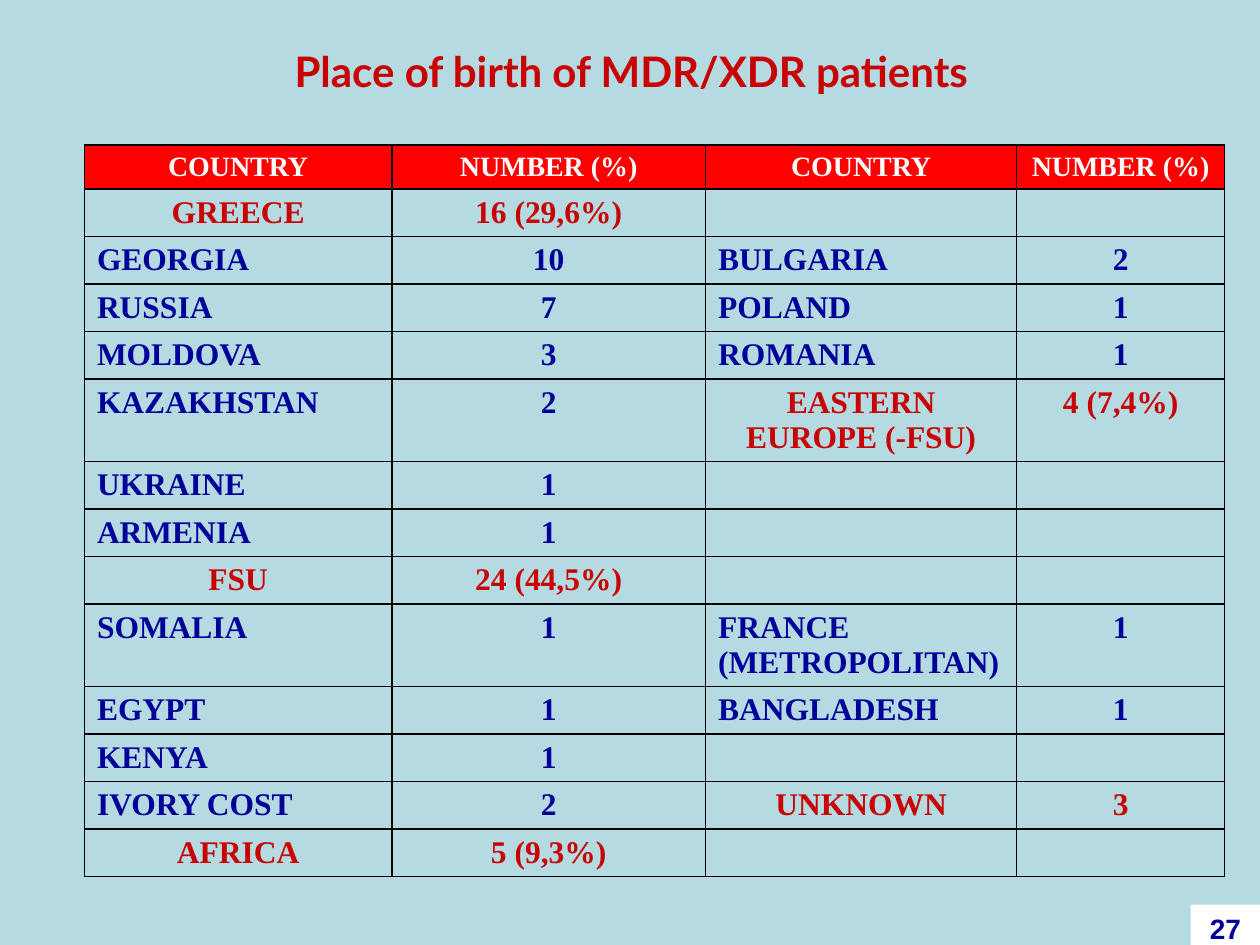
"""Build a slide with a table of birthplaces of MDR/XDR patients."""
from dataclasses import dataclass

from lxml import etree
from pptx import Presentation
from pptx.dml.color import RGBColor
from pptx.enum.shapes import MSO_SHAPE
from pptx.enum.text import MSO_ANCHOR, PP_ALIGN
from pptx.oxml.ns import qn
from pptx.util import Inches, Pt

CENTER, LEFT = PP_ALIGN.CENTER, PP_ALIGN.LEFT
MIDDLE, BOTTOM = MSO_ANCHOR.MIDDLE, MSO_ANCHOR.BOTTOM
RECTANGLE = MSO_SHAPE.RECTANGLE


@dataclass(frozen=True)
class Theme:
    background: str = "B6DAE2"
    header: str = "FF0000"
    white: str = "FFFFFF"
    border: str = "000000"
    total: str = "C80000"
    country: str = "010199"
    page: str = "000099"
    title_size: int = 24
    header_size: int = 16
    body_size: int = 18
    page_size: int = 16
    title_font: str = "Lato"
    table_font: str = "Times New Roman"
    page_font: str = "Arial"


THEME = Theme()

ROWS = [
    ("COUNTRY", "NUMBER (%)", "COUNTRY", "NUMBER (%)"),
    ("GREECE", "16 (29,6%)", "", ""),
    ("GEORGIA", "10", "BULGARIA", "2"),
    ("RUSSIA", "7", "POLAND", "1"),
    ("MOLDOVA", "3", "ROMANIA", "1"),
    ("KAZAKHSTAN", "2", "EASTERN EUROPE (-FSU)", "4 (7,4%)"),
    ("UKRAINE", "1", "", ""),
    ("ARMENIA", "1", "", ""),
    ("FSU", "24 (44,5%)", "", ""),
    ("SOMALIA", "1", "FRANCE\n(METROPOLITAN)", "1"),
    ("EGYPT", "1", "BANGLADESH", "1"),
    ("KENYA", "1", "", ""),
    ("IVORY COST", "2", "UNKNOWN", "3"),
    ("AFRICA", "5 (9,3%)", "", ""),
]
TOTALS = {"GREECE", "FSU", "AFRICA", "EASTERN EUROPE (-FSU)", "UNKNOWN"}
TWO_LINES = {"EASTERN EUROPE (-FSU)", "FRANCE\n(METROPOLITAN)"}
COLUMN_WIDTHS = (2.44, 2.49, 2.47, 1.65)
HEADER_HEIGHT, ROW_HEIGHT, TALL_HEIGHT = 0.35, 0.37, 0.65


def write(frame, text, font, size, color, align):
    frame.text = text
    for paragraph in frame.paragraphs:
        paragraph.alignment = align
        for run in paragraph.runs:
            for name, value in {"name": font, "size": Pt(size), "bold": True}.items():
                setattr(run.font, name, value)
            run.font.color.rgb = RGBColor.from_string(color)


def add_borders(cell):
    properties = cell._tc.get_or_add_tcPr()
    for position, side in enumerate(("a:lnL", "a:lnR", "a:lnT", "a:lnB")):
        line = etree.Element(qn(side), w=str(Pt(1)))
        fill = etree.SubElement(line, qn("a:solidFill"))
        etree.SubElement(fill, qn("a:srgbClr"), val=THEME.border)
        properties.insert(position, line)


presentation = Presentation()
presentation.slide_width, presentation.slide_height = Inches(10), Inches(7.5)
slide = presentation.slides.add_slide(presentation.slide_layouts[5])
slide.background.fill.solid()
slide.background.fill.fore_color.rgb = RGBColor.from_string(THEME.background)

heading = slide.shapes.title
for name, value in {"left": 0.51, "top": 0.21, "width": 9, "height": 0.71}.items():
    setattr(heading, name, Inches(value))
heading.text_frame.vertical_anchor = MIDDLE
write(heading.text_frame, "Place of birth of MDR/XDR patients",
      THEME.title_font, THEME.title_size, THEME.total, CENTER)

birthplaces = slide.shapes.add_table(
    len(ROWS), len(COLUMN_WIDTHS), Inches(0.67), Inches(1.15),
    Inches(sum(COLUMN_WIDTHS)), Inches(5.81)).table
birthplaces.first_row = birthplaces.horz_banding = False
for column, width in zip(birthplaces.columns, COLUMN_WIDTHS):
    column.width = Inches(width)

for row_index, values in enumerate(ROWS):
    is_header = row_index == 0
    height = TALL_HEIGHT if TWO_LINES & set(values) else ROW_HEIGHT
    birthplaces.rows[row_index].height = Inches(HEADER_HEIGHT if is_header else height)
    for column_index, value in enumerate(values):
        cell = birthplaces.cell(row_index, column_index)
        is_count = column_index % 2 == 1
        is_total = values[column_index - is_count] in TOTALS
        if is_header:
            cell.fill.solid()
            cell.fill.fore_color.rgb = RGBColor.from_string(THEME.header)
            size, color = THEME.header_size, THEME.white
        else:
            cell.fill.background()
            size, color = THEME.body_size, THEME.total if is_total else THEME.country
        add_borders(cell)
        align = CENTER if is_header or is_count or is_total else LEFT
        write(cell.text_frame, value, THEME.table_font, size, color, align)
        if not value:
            etree.SubElement(cell.text_frame.paragraphs[0]._p,
                             qn("a:endParaRPr"), sz=str(THEME.header_size * 100))

page_number = slide.shapes.add_shape(
    RECTANGLE, Inches(9.45), Inches(7.18), Inches(0.55), Inches(0.32))
page_number.shadow.inherit = False
page_number.fill.solid()
page_number.fill.fore_color.rgb = RGBColor.from_string(THEME.white)
page_number.line.fill.background()
page_frame = page_number.text_frame
for name, value in {"margin_top": 0, "margin_bottom": 0, "vertical_anchor": BOTTOM}.items():
    setattr(page_frame, name, value)
write(page_frame, "27", THEME.page_font, THEME.page_size, THEME.page, CENTER)

presentation.save("out.pptx")
